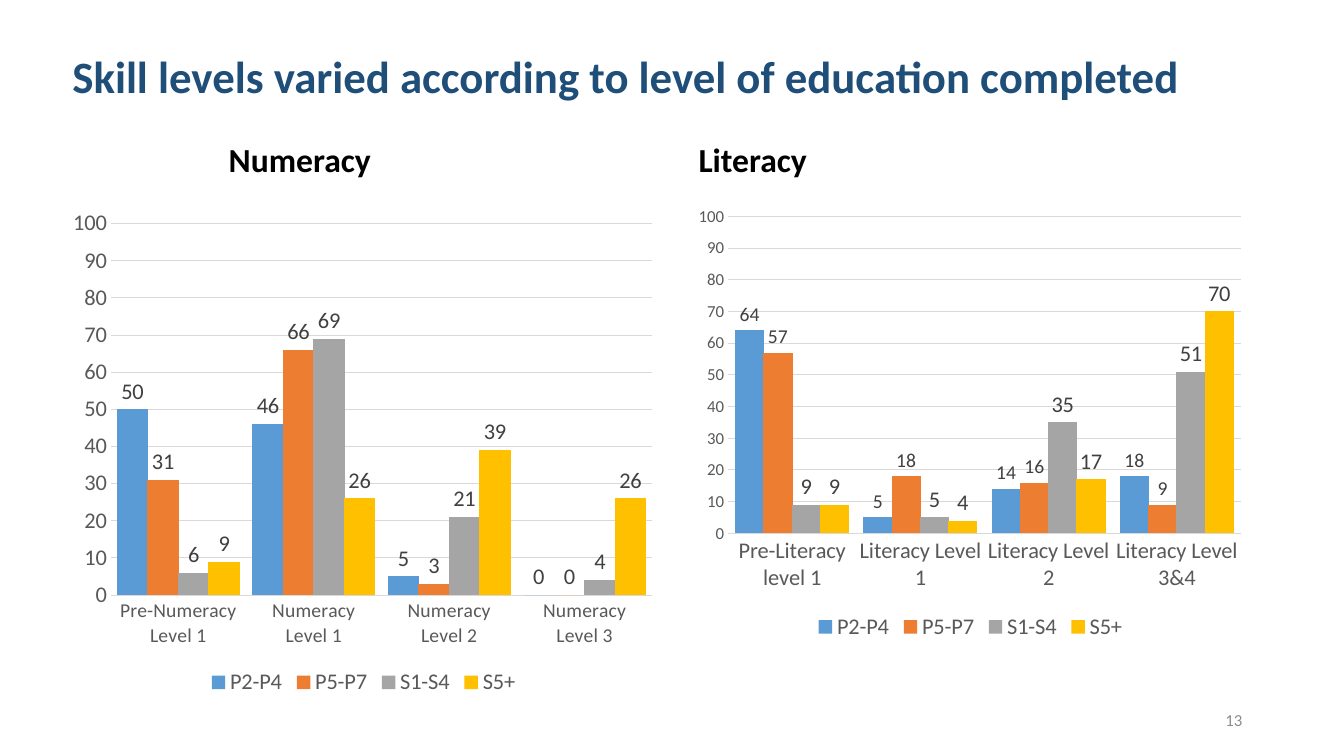
"""Build a slide comparing numeracy and literacy levels by education completed."""
from pptx import Presentation
from pptx.chart.data import CategoryChartData
from pptx.dml.color import RGBColor
from pptx.enum.chart import XL_CHART_TYPE, XL_LABEL_POSITION, XL_LEGEND_POSITION, XL_TICK_MARK
from pptx.enum.text import MSO_ANCHOR, PP_ALIGN
from pptx.oxml import parse_xml
from pptx.oxml.ns import nsdecls, qn
from pptx.util import Inches, Pt

COLUMNS = XL_CHART_TYPE.COLUMN_CLUSTERED
OUTSIDE_END = XL_LABEL_POSITION.OUTSIDE_END
LEGEND_BOTTOM = XL_LEGEND_POSITION.BOTTOM
NO_TICK = XL_TICK_MARK.NONE
MIDDLE, BOTTOM = MSO_ANCHOR.MIDDLE, MSO_ANCHOR.BOTTOM
LEFT, RIGHT = PP_ALIGN.LEFT, PP_ALIGN.RIGHT

NAVY = RGBColor(0x1F, 0x4E, 0x79)
BLACK = RGBColor(0x00, 0x00, 0x00)
PAGE_GRAY = RGBColor(0x8C, 0x8C, 0x8C)
AXIS_GRAY = RGBColor(0x59, 0x59, 0x59)
LABEL_GRAY = RGBColor(0x40, 0x40, 0x40)
GRID_GRAY = RGBColor(0xD9, 0xD9, 0xD9)
BLUE = RGBColor(0x5B, 0x9B, 0xD5)
ORANGE = RGBColor(0xED, 0x7D, 0x31)
GRAY = RGBColor(0xA5, 0xA5, 0xA5)
GOLD = RGBColor(0xFF, 0xC0, 0x00)

EDUCATION_LEVELS = {"P2-P4": BLUE, "P5-P7": ORANGE, "S1-S4": GRAY, "S5+": GOLD}


class SkillSlide:
    """Hold the style and the current slide."""

    font_name = "Calibri"

    def __init__(self, presentation):
        self.slide = presentation.slides.add_slide(presentation.slide_layouts[6])

    def style_font(self, font, size, color, bold=False):
        """Apply the typeface, size, colour and weight."""
        font.name = self.font_name
        font.size = Pt(size)
        font.bold = bold
        font.color.rgb = color

    def add_text(self, box, text, size, color, bold=False, anchor=MIDDLE, align=LEFT):
        """Add a one-paragraph text box."""
        frame = self.slide.shapes.add_textbox(*map(Inches, box)).text_frame
        frame.word_wrap = True
        frame.vertical_anchor = anchor
        paragraph = frame.paragraphs[0]
        paragraph.alignment = align
        paragraph.line_spacing = 0.9
        run = paragraph.add_run()
        run.text = text
        self.style_font(run.font, size, color, bold)

    def place_plot(self, chart, fractions):
        """Fix the inner plot area as fractions of the chart."""
        plot_area = chart.element.find(".//" + qn("c:plotArea"))
        for layout in plot_area.findall(qn("c:layout")):
            plot_area.remove(layout)
        sizes = "".join(f'<c:{key} val="{value}"/>' for key, value in zip("xywh", fractions))
        plot_area.insert(0, parse_xml(
            f'<c:layout {nsdecls("c")}><c:manualLayout><c:layoutTarget val="inner"/>'
            f'<c:xMode val="edge"/><c:yMode val="edge"/>{sizes}</c:manualLayout></c:layout>'))

    def style_axes(self, chart, category_size, value_size):
        """Format both axes and the gridlines."""
        category_axis, value_axis = chart.category_axis, chart.value_axis
        for axis, size in ((category_axis, category_size), (value_axis, value_size)):
            axis.major_tick_mark = axis.minor_tick_mark = NO_TICK
            self.style_font(axis.tick_labels.font, size, AXIS_GRAY)
        value_axis.minimum_scale, value_axis.maximum_scale = 0, 100
        value_axis.major_unit = 10
        value_axis.tick_labels.number_format = "0"
        value_axis.tick_labels.number_format_is_linked = False
        value_axis.format.line.fill.background()
        for line in (category_axis.format.line, value_axis.major_gridlines.format.line):
            line.color.rgb = GRID_GRAY
            line.width = Pt(0.75)

    def add_columns(self, box, categories, values, gap, plot_box, axis_sizes, label_sizes):
        """Add a clustered column chart with value labels."""
        data = CategoryChartData(number_format="0")
        data.categories = categories
        for name, series_values in zip(EDUCATION_LEVELS, values):
            data.add_series(name, series_values)
        chart = self.slide.shapes.add_chart(COLUMNS, *map(Inches, box), data).chart
        self.style_font(chart.font, 10, BLACK)
        chart.has_title = False
        chart.has_legend = True
        chart.legend.position = LEGEND_BOTTOM
        chart.legend.include_in_layout = False
        self.style_font(chart.legend.font, 16, AXIS_GRAY)
        self.style_axes(chart, *axis_sizes)
        self.place_plot(chart, plot_box)
        plot = chart.plots[0]
        plot.gap_width = gap
        plot.overlap = 3
        plot.vary_by_categories = False
        for series, color, size in zip(plot.series, EDUCATION_LEVELS.values(), label_sizes):
            series.format.fill.solid()
            series.format.fill.fore_color.rgb = color
            series.invert_if_negative = False
            labels = series.data_labels
            labels.show_value = True
            labels.position = OUTSIDE_END
            labels.number_format = "0"
            labels.number_format_is_linked = False
            self.style_font(labels.font, size, LABEL_GRAY)


def main():
    """Build and save the presentation."""
    presentation = Presentation()
    presentation.slide_width, presentation.slide_height = Inches(13.33), Inches(7.5)
    skills = SkillSlide(presentation)
    skills.add_text((0.62, 0.3, 11.3, 0.97),
                    "Skill levels varied according to level of education completed",
                    32, NAVY, bold=True)
    for left, heading in ((2.17, "Numeracy"), (6.83, "Literacy")):
        skills.add_text((left, 1.13, 4.42, 0.7), heading, 24, BLACK, bold=True, anchor=BOTTOM)
    skills.add_text((9.42, 6.95, 3, 0.4), "13", 12, PAGE_GRAY, align=RIGHT)
    skills.add_columns(
        (6.83, 1.97, 5.59, 4.43),
        ["Pre-Literacy level 1", "Literacy Level 1", "Literacy Level 2", "Literacy Level 3&4"],
        [(64, 5, 14, 18), (57, 18, 16, 9), (9, 5, 35, 51), (9, 4, 17, 70)],
        gap=49, plot_box=(0.07, 0.04, 0.91, 0.71),
        axis_sizes=(16, 12), label_sizes=(14, 14, 16, 16))
    skills.add_columns(
        (0.62, 1.97, 5.97, 4.98),
        ["Pre-Numeracy Level 1", "Numeracy Level 1", "Numeracy Level 2", "Numeracy Level 3"],
        [(50, 46, 5, 0), (31, 66, 3, 0), (6, 69, 21, 4), (9, 26, 39, 26)],
        gap=39, plot_box=(0.08, 0.05, 0.9, 0.74),
        axis_sizes=(14, 16), label_sizes=(16, 16, 16, 16))
    presentation.save("out.pptx")


if __name__ == "__main__":
    main()
